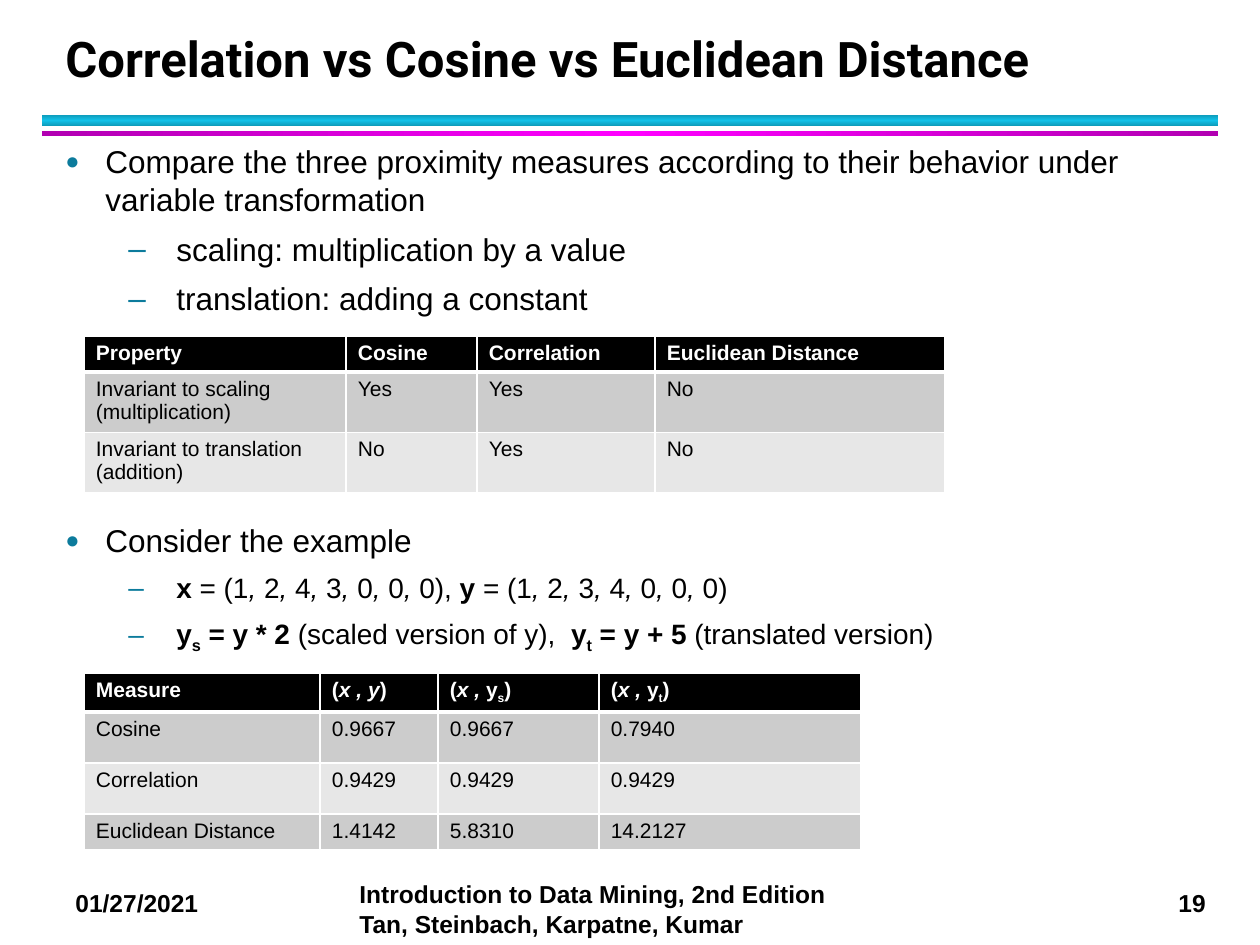
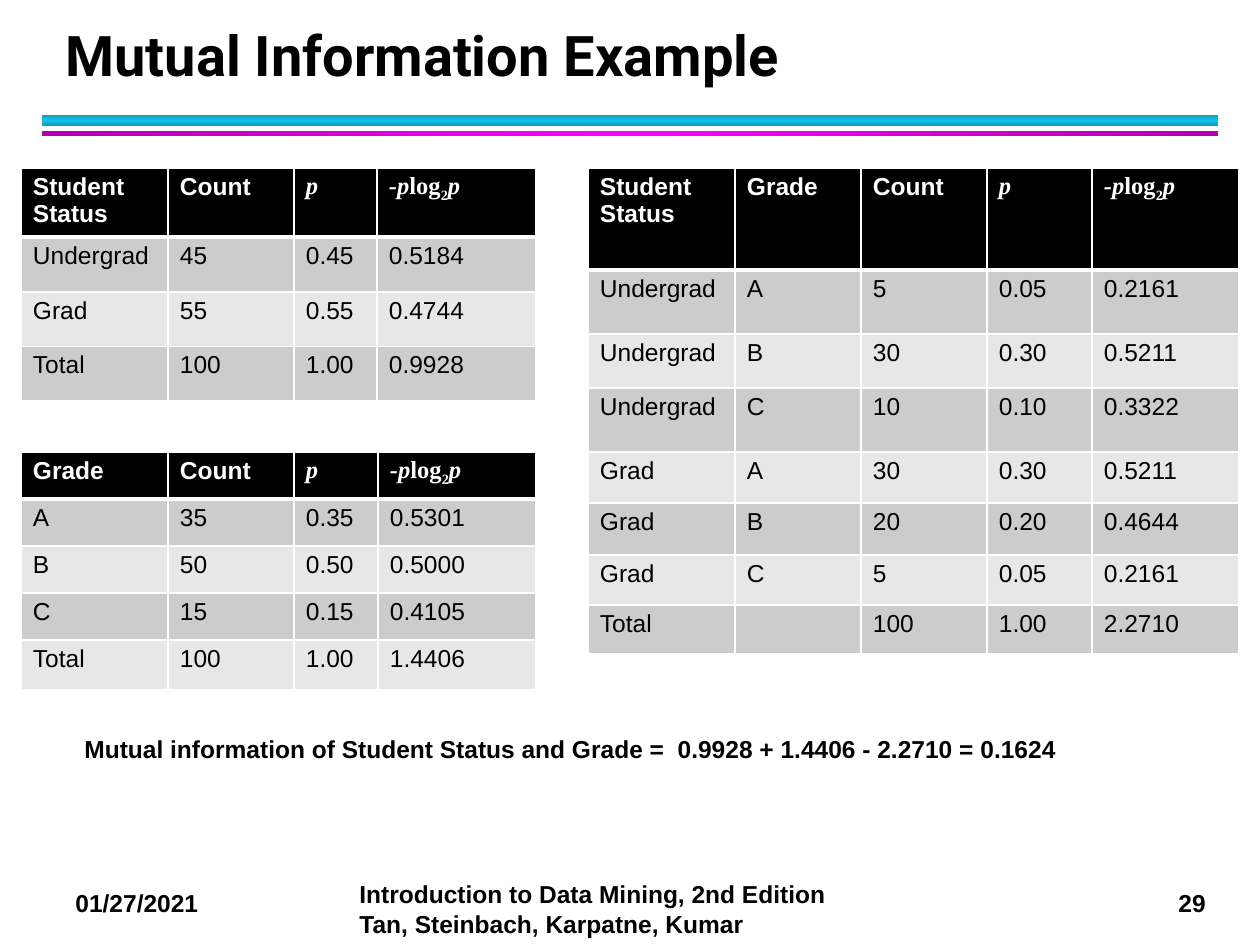
from copy import deepcopy

from pptx import Presentation
from pptx import util as u
from pptx.dml.color import RGBColor
from pptx.enum import shapes, text
from pptx.oxml import ns
from lxml import etree

# Shared scale, colours and fonts
PX = u.Inches(1) / 126
BLACK, WHITE = "000000", "FFFFFF"
ROW_SHADES = ("CCCCCC", "E7E7E7")
BULLET_BLUE = "0C7B9C"
CYAN_BAND = ("0E9BBA", "12C2E9", "0E9BBA")
MAGENTA_BAND = ("B200B2", "FF00FF", "B200B2")
BODY_FONT, TITLE_FONT, MATH_FONT = "Arial", "Roboto", "Times New Roman"

# Run styles: b = bold, i = italic, s = subscript, m = math font
ENTROPY = [("-p", "im"), ("log", "m"), ("2", "sm"), ("p", "im")]
PROBABILITY = [("p", "im")]


def px(length):
    return u.Emu(round(length * PX))


def rgb(hex_colour):
    return RGBColor.from_string(hex_colour)


def add_runs(paragraph, content, size, colour=BLACK, bold=False, font=BODY_FONT):
    """Write a plain string or a list of (words, styles) as runs."""
    pieces = [(content, "")] if isinstance(content, str) else content
    for words, styles in pieces:
        if not words:
            continue
        run = paragraph.add_run()
        run.text = words
        run.font.size = u.Pt(size)
        run.font.name = MATH_FONT if "m" in styles else font
        run.font.bold = bold or "b" in styles
        run.font.italic = "i" in styles
        run.font.color.rgb = rgb(colour)
        if "s" in styles:
            run.font._element.set("baseline", "-25000")


def add_text_frame(slide, x, y, width, height, wrap=True):
    frame = slide.shapes.add_textbox(px(x), px(y), px(width), px(height)).text_frame
    frame.word_wrap = wrap
    return frame


def add_label(slide, x, y, width, height, lines, wrap=True):
    """Bold 14 pt label, with a line break between its lines."""
    paragraph = add_text_frame(slide, x, y, width, height, wrap).paragraphs[0]
    for number, line in enumerate(lines):
        if number:
            paragraph.add_line_break()
        add_runs(paragraph, line, 14, bold=True)


def add_band(slide, y, height, colours, angle):
    band = slide.shapes.add_shape(
        shapes.MSO_SHAPE.RECTANGLE, px(42), px(y), px(1176), px(height))
    band.shadow.inherit = False
    band.line.fill.background()
    band.fill.gradient()
    band.fill.gradient_angle = angle
    first = band._element.find(".//" + ns.qn("a:gs"))
    first.addnext(deepcopy(first))
    for stop, colour, position in zip(band.fill.gradient_stops, colours, (0, 0.5, 1)):
        stop.color.rgb = rgb(colour)
        stop.position = position


def add_base_slide(deck, title, title_size, number):
    """Blank slide with title, the two bands and the footer."""
    slide = deck.slides.add_slide(deck.slide_layouts[6])
    add_band(slide, 115, 11, CYAN_BAND, 90)
    add_band(slide, 131, 5, MAGENTA_BAND, 0)

    add_label(slide, 63, 882, 168, 42, ["01/27/2021"])
    add_label(slide, 1166, 882, 55, 42, [number], wrap=False)
    add_label(slide, 347, 873, 514, 72,
              ["Introduction to Data Mining, 2nd Edition", "Tan, Steinbach, Karpatne, Kumar"])

    heading = add_text_frame(slide, 53, 21, 1142, 73)
    heading.vertical_anchor = text.MSO_ANCHOR.BOTTOM
    heading.paragraphs[0].line_spacing = u.Pt(36)
    add_runs(heading.paragraphs[0], title, title_size, bold=True, font=TITLE_FONT)
    return slide


def set_bullet(paragraph, level):
    """Dot on the first level, dash on the second."""
    margin, hanging, mark, percent = ((40, 40, "●", 75), (111, 48, "–", 100))[level]
    paragraph.level = level
    properties = paragraph._p.get_or_add_pPr()
    properties.set("marL", str(px(margin)))
    properties.set("indent", str(-px(hanging)))
    colour = etree.SubElement(properties, ns.qn("a:buClr"))
    etree.SubElement(colour, ns.qn("a:srgbClr"), val=BULLET_BLUE)
    etree.SubElement(properties, ns.qn("a:buSzPct"), val=str(percent * 1000))
    etree.SubElement(properties, ns.qn("a:buFont"), typeface=BODY_FONT)
    etree.SubElement(properties, ns.qn("a:buChar"), char=mark)


def add_bullets(slide, x, y, width, height, items):
    """Items are (level, size, space before, content)."""
    frame = add_text_frame(slide, x, y, width, height)
    for number, (level, size, before, content) in enumerate(items):
        paragraph = frame.add_paragraph() if number else frame.paragraphs[0]
        paragraph.space_before = u.Pt(before)
        paragraph.space_after = u.Pt(4)
        set_bullet(paragraph, level)
        add_runs(paragraph, content, size)


def set_borders(cell, top, bottom):
    properties = cell._tc.get_or_add_tcPr()
    for side, points in (("L", 1), ("R", 1), ("T", top), ("B", bottom)):
        line = etree.SubElement(properties, ns.qn("a:ln" + side), w=str(u.Pt(points)))
        fill = etree.SubElement(line, ns.qn("a:solidFill"))
        etree.SubElement(fill, ns.qn("a:srgbClr"), val=WHITE)


def add_data_table(slide, x, y, widths, heights, rows, size):
    """Black header over rows in alternating greys, with white rules."""
    table = slide.shapes.add_table(
        len(rows), len(widths), px(x), px(y), px(sum(widths)), px(sum(heights))).table
    for column, width in zip(table.columns, widths):
        column.width = px(width)
    for r, (row, height) in enumerate(zip(rows, heights)):
        table.rows[r].height = px(height)
        header = r == 0
        for c, content in enumerate(row):
            cell = table.cell(r, c)
            cell.margin_left = cell.margin_right = px(12)
            cell.margin_top = cell.margin_bottom = px(5)
            set_borders(cell, 3 if r == 1 else 1, 3 if header else 1)
            cell.fill.solid()
            cell.fill.fore_color.rgb = rgb(BLACK if header else ROW_SHADES[(r - 1) % 2])
            add_runs(cell.text_frame.paragraphs[0], content, size,
                     WHITE if header else BLACK, bold=header)


def vector(name, values):
    """Bold name, then the values in brackets with italic commas."""
    runs = [(name + " ", "b"), ("= (", "")]
    for number, value in enumerate(values):
        if number:
            runs.append((", ", "i"))
        runs.append((value, ""))
    return runs + [(")", "")]


def pair_header(name, subscript):
    return [("(", ""), ("x , ", "i"), (name, ""), (subscript, "s"), (")", "")]


def build_comparison(deck):
    slide = add_base_slide(deck, "Correlation vs Cosine vs Euclidean Distance", 28, "19")

    # The gap before the example leaves room for the property table
    vectors = vector("x", "1243000") + [(", ", "")] + vector("y", "1234000")
    versions = [("y", "b"), ("s", "bs"), (" = y * 2 ", "b"), ("(scaled version of y),  ", ""),
                ("y", "b"), ("t", "bs"), (" = y + 5 ", "b"), ("(translated version)", "")]
    add_bullets(slide, 53, 136, 1147, 714, [
        (0, 18, 2.8, "Compare the three proximity measures according to their behavior "
                     "under variable transformation"),
        (1, 18, 2.8, "scaling: multiplication by a value"),
        (1, 18, 2.8, "translation: adding a constant"),
        (0, 18, 112.5, "Consider the example"),
        (1, 16, 2.8, vectors),
        (1, 16, 2.8, versions),
    ])

    # Invariance properties
    add_data_table(slide, 84, 336, (262, 131, 178, 290), (36, 60, 59), [
        ("Property", "Cosine", "Correlation", "Euclidean Distance"),
        ("Invariant to scaling (multiplication)", "Yes", "Yes", "No"),
        ("Invariant to translation (addition)", "No", "Yes", "No"),
    ], 12)

    # Measured values
    add_data_table(slide, 84, 673, (236, 118, 161, 262), (39, 51, 51, 36), [
        ("Measure", [("(", ""), ("x , y", "i"), (")", "")],
         pair_header("y", "s"), pair_header("y", "t")),
        ("Cosine", "0.9667", "0.9667", "0.7940"),
        ("Correlation", "0.9429", "0.9429", "0.9429"),
        ("Euclidean Distance", "1.4142", "5.8310", "14.2127"),
    ], 12)


def build_mutual_information(deck):
    slide = add_base_slide(deck, "Mutual Information Example", 32, "29")
    measures = ("Count", PROBABILITY, ENTROPY)

    # Entropy of student status
    add_data_table(slide, 21, 168, (147, 126, 83, 159), (67, 55, 55, 54), [
        ("Student Status", *measures),
        ("Undergrad", "45", "0.45", "0.5184"),
        ("Grad", "55", "0.55", "0.4744"),
        ("Total", "100", "1.00", "0.9928"),
    ], 14)

    # Entropy of grade
    add_data_table(slide, 21, 452, (147, 126, 84, 158), (47, 47, 47, 47, 50), [
        ("Grade", *measures),
        ("A", "35", "0.35", "0.5301"),
        ("B", "50", "0.50", "0.5000"),
        ("C", "15", "0.15", "0.4105"),
        ("Total", "100", "1.00", "1.4406"),
    ], 14)

    # Joint entropy
    add_data_table(slide, 588, 168, (147, 126, 126, 105, 147),
                   (102, 64, 54, 64, 51, 52, 50, 49), [
        ("Student Status", "Grade", *measures),
        ("Undergrad", "A", "5", "0.05", "0.2161"),
        ("Undergrad", "B", "30", "0.30", "0.5211"),
        ("Undergrad", "C", "10", "0.10", "0.3322"),
        ("Grad", "A", "30", "0.30", "0.5211"),
        ("Grad", "B", "20", "0.20", "0.4644"),
        ("Grad", "C", "5", "0.05", "0.2161"),
        ("Total", "", "100", "1.00", "2.2710"),
    ], 14)

    # Result
    add_label(slide, 72, 728, 1102, 42, [
        "Mutual information of Student Status and Grade =  0.9928 + 1.4406 - 2.2710 = 0.1624"])


def main():
    deck = Presentation()
    deck.slide_width, deck.slide_height = px(1260), px(945)
    build_comparison(deck)
    build_mutual_information(deck)
    deck.save("out.pptx")


if __name__ == "__main__":
    main()
